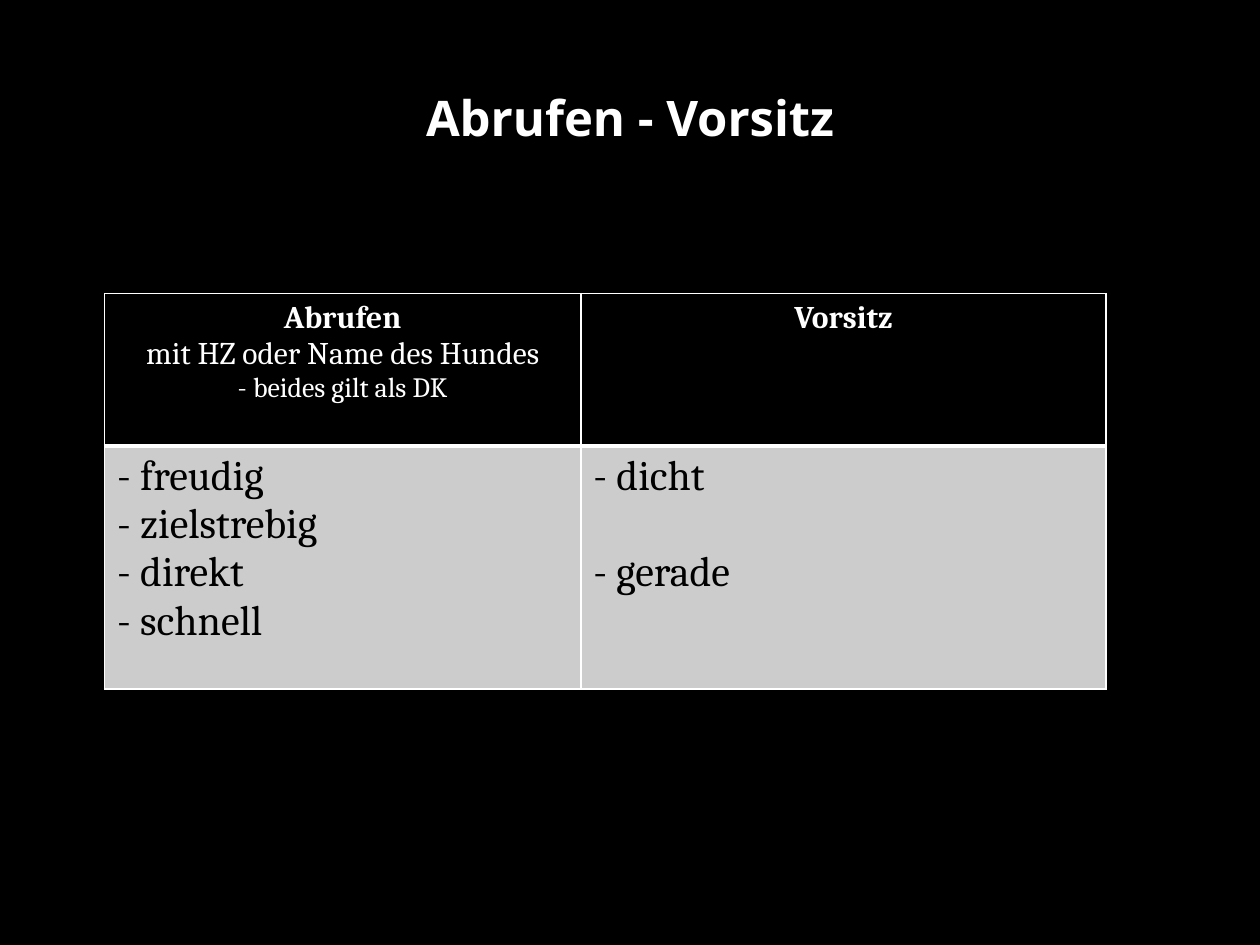
from lxml.etree import SubElement
from pptx import Presentation
from pptx.dml.color import RGBColor
from pptx.enum.text import MSO_ANCHOR, PP_ALIGN
from pptx.oxml.ns import qn
from pptx.util import Inches, Pt

BLACK = RGBColor(0x00, 0x00, 0x00)
WHITE = RGBColor(0xFF, 0xFF, 0xFF)
GREY = RGBColor(0xCC, 0xCC, 0xCC)

TITLE_FONT = "Noto Sans"
TABLE_FONT = "Cambria"
COLUMN_WIDTHS = (3.78, 4.17)
ROW_HEIGHTS = (1.21, 1.93)

# Header lines: text, size, bold
HEADERS = (
    (("Abrufen", 18, True),
     ("mit HZ oder Name des Hundes", 18, False),
     ("- beides gilt als DK", 16, False)),
    (("Vorsitz", 18, True),),
)
# Criteria and the space before each following line, in points
CRITERIA = (
    (("- freudig", "- zielstrebig", "- direkt", "- schnell"), 0),
    (("- dicht", "- gerade"), 27.6),
)


def write_line(para, text, font_name, size, color, bold, align):
    para.text = text
    para.alignment = align
    font = para.runs[0].font
    font.name, font.size, font.bold = font_name, Pt(size), bold
    font.color.rgb = color


def add_title(page, text):
    title = page.shapes.title
    title.left, title.top = Inches(0.5), Inches(0.3)
    title.width, title.height = Inches(9), Inches(1.25)
    frame = title.text_frame
    frame.vertical_anchor = MSO_ANCHOR.MIDDLE
    write_line(frame.paragraphs[0], text, TITLE_FONT, 28, WHITE, True, PP_ALIGN.CENTER)


def style_cell(cell, fill_color, top=1, bottom=1):
    """Draw the white borders first, since the fill must follow them."""
    properties = cell._tc.get_or_add_tcPr()
    for side, width in (("L", 1), ("R", 1), ("T", top), ("B", bottom)):
        line = SubElement(properties, qn(f"a:ln{side}"), w=str(Pt(width)))
        SubElement(SubElement(line, qn("a:solidFill")), qn("a:srgbClr"), val=str(WHITE))
    cell.fill.solid()
    cell.fill.fore_color.rgb = fill_color


def fill_cell(cell, lines, color, align, gap=0):
    frame = cell.text_frame
    for index, (text, size, bold) in enumerate(lines):
        para = frame.add_paragraph() if index else frame.paragraphs[0]
        write_line(para, text, TABLE_FONT, size, color, bold, align)
        if index and gap:
            para.space_before = Pt(gap)


def add_criteria_table(page):
    table = page.shapes.add_table(
        len(ROW_HEIGHTS), len(COLUMN_WIDTHS), Inches(0.83), Inches(2.33),
        Inches(sum(COLUMN_WIDTHS)), Inches(sum(ROW_HEIGHTS))).table
    for row, height in zip(table.rows, ROW_HEIGHTS):
        row.height = Inches(height)
    for index, width in enumerate(COLUMN_WIDTHS):
        table.columns[index].width = Inches(width)
        header, body = table.cell(0, index), table.cell(1, index)
        # Header row with a thick rule below
        style_cell(header, BLACK, bottom=3)
        fill_cell(header, HEADERS[index], WHITE, PP_ALIGN.CENTER)
        # Criteria row
        style_cell(body, GREY, top=3)
        texts, gap = CRITERIA[index]
        fill_cell(body, [(text, 24, False) for text in texts], BLACK, PP_ALIGN.LEFT, gap)


def main():
    deck = Presentation()
    deck.slide_width, deck.slide_height = Inches(10), Inches(7.5)
    page = deck.slides.add_slide(deck.slide_layouts[5])
    page.background.fill.solid()
    page.background.fill.fore_color.rgb = BLACK
    add_criteria_table(page)
    add_title(page, "Abrufen - Vorsitz")
    deck.save("out.pptx")


if __name__ == "__main__":
    main()
